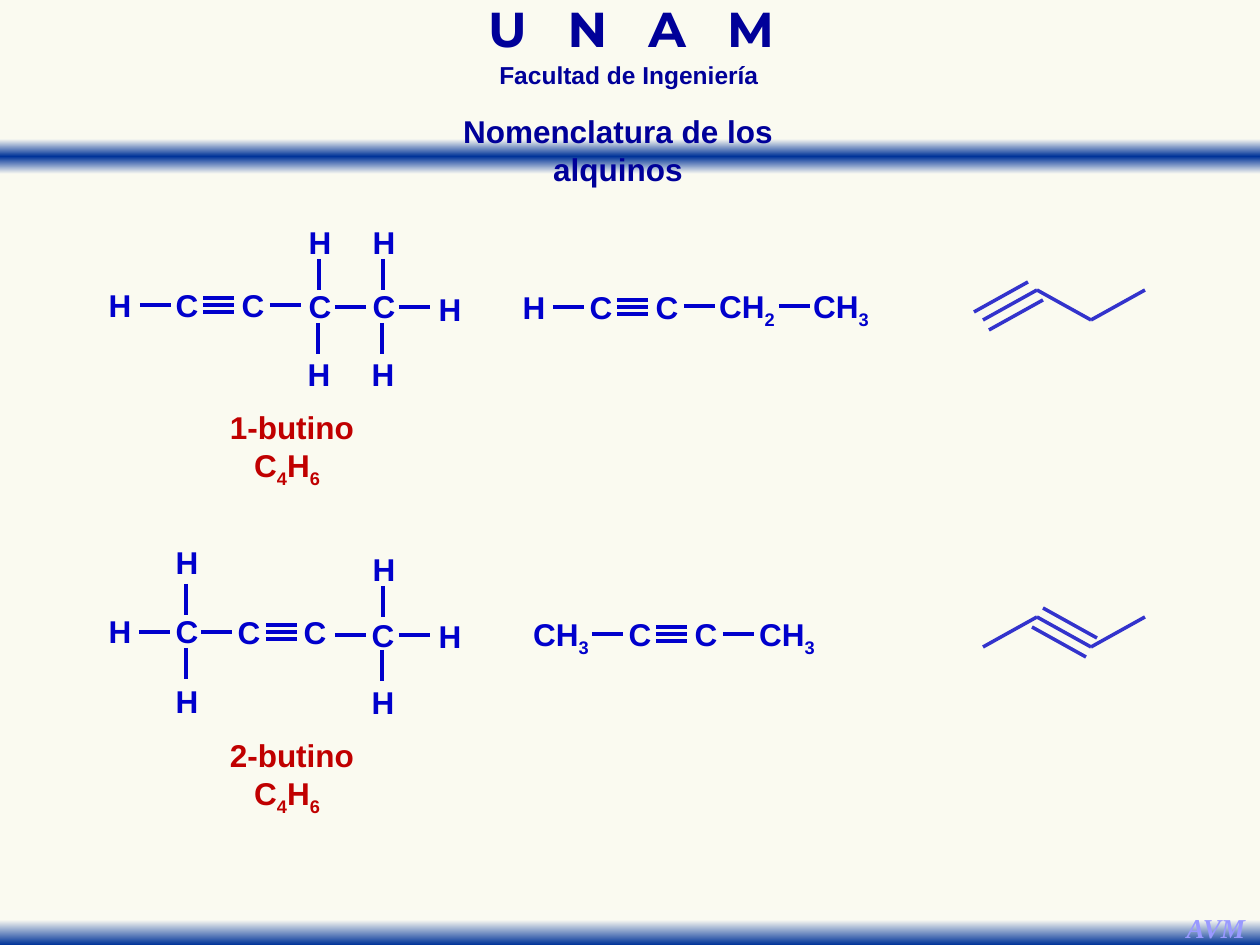
from copy import deepcopy
from dataclasses import dataclass
from itertools import groupby

from pptx import Presentation
from pptx.dml.color import RGBColor as RGB
from pptx.enum.shapes import MSO_CONNECTOR as CONN, MSO_SHAPE as SHAPE
from pptx.enum.text import MSO_AUTO_SIZE as AUTO, PP_ALIGN as ALIGN
from pptx.oxml.ns import qn
from pptx.oxml.xmlchemy import OxmlElement
from pptx.util import Emu, Pt

PX_PER_INCH = 126
CREAM = RGB(0xFA, 0xFA, 0xF0)
PALE = RGB(0xFA, 0xFA, 0xF2)
BAND_BLUE = RGB(0x00, 0x33, 0x99)
NAVY = RGB(0x00, 0x00, 0x99)
BLUE = RGB(0x00, 0x00, 0xCC)
SKELETON_BLUE = RGB(0x33, 0x33, 0xCC)
RED = RGB(0xC0, 0x00, 0x00)
LILAC = RGB(0x99, 0x99, 0xFF)
BOND = 31
TRIPLE_GAP = 7
ROW_STEP = 328


@dataclass
class Molecule:
    atoms: list[tuple[str, int, int]]
    across: list[tuple[int, int]]
    triple: tuple[int, int]
    down: list[tuple[int, int]]


@dataclass
class Skeleton:
    top: int
    triple_bond: int
    offsets: list[tuple[int, int]]


MOLECULES = [
    Molecule(
        [("H", 120, 305), ("C", 187, 305), ("C", 253, 305), ("C", 320, 306),
         ("C", 384, 306), ("H", 450, 309), ("H", 320, 242), ("H", 384, 242),
         ("H", 319, 374), ("H", 383, 374)],
        [(140, 305), (270, 305), (335, 307), (399, 307)],
        (203, 305),
        [(319, 259), (318, 323), (383, 259), (382, 323)],
    ),
    Molecule(
        [("H", 534, 307), ("C", 601, 307), ("C", 667, 307),
         ("CH2", 747, 306), ("CH3", 841, 306)],
        [(553, 307), (684, 306), (779, 306)],
        (617, 307),
        [],
    ),
    Molecule(
        [("H", 120, 631), ("C", 187, 631), ("C", 249, 632), ("C", 315, 632),
         ("C", 383, 635), ("H", 450, 636), ("H", 187, 562), ("H", 187, 701),
         ("H", 384, 569), ("H", 383, 702)],
        [(139, 632), (201, 632), (335, 635), (399, 635)],
        (266, 632),
        [(186, 584), (186, 648), (383, 586), (382, 650)],
    ),
    Molecule(
        [("CH3", 561, 634), ("C", 640, 634), ("C", 706, 634), ("CH3", 787, 634)],
        [(592, 634), (723, 634)],
        (656, 634),
        [],
    ),
]
SKELETONS = [
    Skeleton(290, 0, [(6, 10), (-9, -8)]),
    Skeleton(617, 1, [(-5, 10), (6, -9)]),
]


def px(n: float) -> Emu:
    return Emu(round(n * 914400 / PX_PER_INCH))


def add_text(shapes, text: str, cx: int, cy: int, w: int = 49, h: int = 50, *,
             size: float = 18, font: str = "Arial", color: RGB = BLUE,
             italic: bool = False, subs: bool = False,
             line_spacing: float | None = None, tracking: int = 0) -> None:
    tf = shapes.add_textbox(px(cx - w / 2), px(cy - h / 2), px(w), px(h)).text_frame
    tf.word_wrap = False
    tf.auto_size = AUTO.SHAPE_TO_FIT_TEXT
    p = tf.paragraphs[0]
    p.alignment = ALIGN.CENTER
    if line_spacing:
        p.line_spacing = line_spacing
    if subs:
        parts = ["".join(group) for _, group in groupby(text, str.isdigit)]
    else:
        parts = [text[:-1], text[-1]] if tracking else [text]
    for i, part in enumerate(parts):
        r = p.add_run()
        r.text = part
        f = r.font
        f.name, f.size, f.bold, f.italic = font, Pt(size), True, italic
        f.color.rgb = color
        if subs and part.isdigit():
            r._r.get_or_add_rPr().set("baseline", "-25000")
        if tracking and i == 0:
            r._r.get_or_add_rPr().set("spc", str(tracking))


def add_line(shapes, x1: int, y1: int, x2: int, y2: int, color: RGB = BLUE) -> None:
    line = shapes.add_connector(CONN.STRAIGHT, px(x1), px(y1), px(x2), px(y2))
    line.line.color.rgb = color
    line.line.width = Pt(2)
    line._element.spPr.append(OxmlElement("a:effectLst"))


def add_band(shapes, top: int, stops: list[tuple[float, RGB]]) -> None:
    sp = shapes.add_shape(SHAPE.RECTANGLE, 0, px(top), px(1260), px(35))
    sp.shadow.inherit = False
    sp.line.fill.background()
    sp.fill.gradient()
    sp.fill.gradient_angle = 270
    gs_list = sp._element.spPr.find(qn("a:gradFill")).find(qn("a:gsLst"))
    while len(gs_list) < len(stops):
        gs_list.append(deepcopy(gs_list[0]))
    for stop, (position, color) in zip(sp.fill.gradient_stops, stops):
        stop.position = position
        stop.color.rgb = color


def add_molecule(shapes, m: Molecule) -> None:
    group = shapes.add_group_shape().shapes
    x, y = m.triple
    triple = [(x, y + d) for d in (-TRIPLE_GAP, 0, TRIPLE_GAP)]
    for x, y in m.across + triple:
        add_line(group, x, y, x + BOND, y)
    for x, y in m.down:
        add_line(group, x, y, x, y + BOND)
    for label, cx, cy in m.atoms:
        add_text(group, label, cx, cy, 49 if len(label) == 1 else 83, subs=True)


def add_skeleton(shapes, k: Skeleton) -> None:
    group = shapes.add_group_shape().shapes
    points = [(983 + 54 * i, k.top + 30 * ((i + 1) % 2)) for i in range(4)]
    bonds = [(*a, *b) for a, b in zip(points, points[1:])]
    x1, y1, x2, y2 = bonds[k.triple_bond]
    bonds += [(x1 + dx, y1 + dy, x2 + dx, y2 + dy) for dx, dy in k.offsets]
    for bond in bonds:
        add_line(group, *bond, color=SKELETON_BLUE)


def main() -> None:
    prs = Presentation()
    prs.slide_width, prs.slide_height = px(1260), px(945)
    s = prs.slides.add_slide(prs.slide_layouts[6])
    s.background.fill.solid()
    s.background.fill.fore_color.rgb = CREAM
    shapes = s.shapes

    add_band(shapes, 139, [(0, PALE), (0.5, BAND_BLUE), (1, PALE)])
    add_text(shapes, "U N A M", 631, 35, 493, 54, size=28, font="Montserrat",
             color=NAVY, line_spacing=0.7, tracking=780)
    add_text(shapes, "Facultad de Ingeniería", 629, 79, 450, 34, size=14,
             color=NAVY, line_spacing=0.7)
    add_band(shapes, 910, [(0.28, PALE), (1, BAND_BLUE)])
    add_text(shapes, "AVM", 1216, 928, 86, 47, size=15.6,
             font="Times New Roman", color=LILAC, italic=True)
    add_text(shapes, "Nomenclatura de los alquinos", 618, 131, 469, color=NAVY)

    for row, name in enumerate(("1-butino", "2-butino")):
        dy = row * ROW_STEP
        add_text(shapes, name, 292, 427 + dy, 151, color=RED)
        add_text(shapes, "C4H6", 287, 465 + dy, 95, color=RED, subs=True)
    for molecule in MOLECULES:
        add_molecule(shapes, molecule)
    for skeleton in SKELETONS:
        add_skeleton(shapes, skeleton)
    prs.save("out.pptx")


if __name__ == "__main__":
    main()
